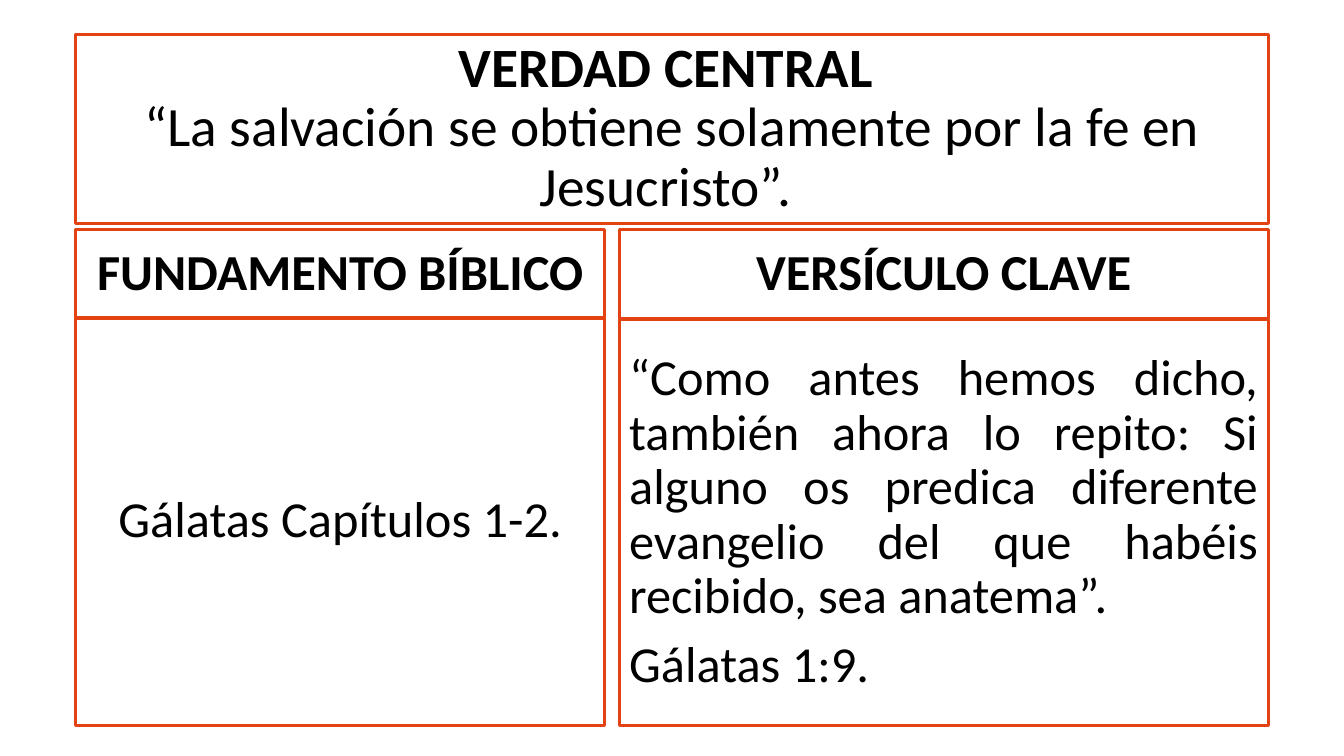
from lxml.etree import SubElement
from pptx import Presentation
from pptx.dml.color import RGBColor
from pptx.enum.text import MSO_ANCHOR, MSO_AUTO_SIZE, PP_ALIGN
from pptx.oxml.ns import qn
from pptx.util import Inches, Pt

ORANGE = RGBColor(0xE3, 0x43, 0x12)
BLACK = RGBColor(0, 0, 0)
FONT = "Calibri"

# Each paragraph is a list of (text, bold) lines.
TITLE = [[("VERDAD CENTRAL ", True),
          ("“La salvación se obtiene solamente por la fe en Jesucristo”. ", False)]]
BASIS_HEAD = [[("FUNDAMENTO BÍBLICO", True)]]
BASIS = [[("Gálatas Capítulos 1-2.", False)]]
VERSE_HEAD = [[("VERSÍCULO CLAVE", True)]]
VERSE = [
    [("“Como antes hemos dicho, también ahora lo repito: Si alguno os predica "
      "diferente evangelio del que habéis recibido, sea anatema”. ", False)],
    [("Gálatas 1:9.", False)],
]

# Grid in inches
LEFT, RIGHT, BOTTOM = 0.75, 12.58, 7.2
TITLE_TOP, TITLE_H = 0.34, 1.88
HEAD_TOP, HEAD_H = 2.28, 0.88
BASIS_TOP, VERSE_TOP = 3.15, 3.17
BASIS_W, VERSE_LEFT = 5.25, 6.14
VERSE_W = RIGHT - VERSE_LEFT


def fill_box(sp, paragraphs, box, size=36, align=PP_ALIGN.CENTER):
    """Place a placeholder, outline it and write its paragraphs."""
    sp.left, sp.top, sp.width, sp.height = (Inches(v) for v in box)
    sp.fill.background()
    sp.line.color.rgb = ORANGE
    sp.line.width = Pt(2.25)
    tf = sp.text_frame
    tf.word_wrap = True
    tf.auto_size = MSO_AUTO_SIZE.NONE
    tf.vertical_anchor = MSO_ANCHOR.MIDDLE
    for i, lines in enumerate(paragraphs):
        p = tf.add_paragraph() if i else tf.paragraphs[0]
        pPr = p._p.get_or_add_pPr()
        pPr.set("marL", "0")
        pPr.set("indent", "0")
        SubElement(pPr, qn("a:buNone"))
        p.alignment = align
        p.line_spacing = 0.9
        p.space_before = Pt(10 if i else 0)
        for j, (text, bold) in enumerate(lines):
            if j:
                p.add_line_break()
            r = p.add_run()
            r.text = text
            r.font.name = FONT
            r.font.size = Pt(size)
            r.font.bold = bold
            r.font.color.rgb = BLACK


prs = Presentation()
prs.slide_width, prs.slide_height = Inches(13.33), Inches(7.5)
s = prs.slides.add_slide(prs.slide_layouts.get_by_name("Comparison"))
title, basis_head, basis, verse_head, verse = s.placeholders

fill_box(title, TITLE, (LEFT, TITLE_TOP, RIGHT - LEFT, TITLE_H), size=39.6)
fill_box(basis_head, BASIS_HEAD, (LEFT, HEAD_TOP, BASIS_W, HEAD_H))
fill_box(basis, BASIS, (LEFT, BASIS_TOP, BASIS_W, BOTTOM - BASIS_TOP))
fill_box(verse_head, VERSE_HEAD, (VERSE_LEFT, HEAD_TOP, VERSE_W, HEAD_H))
fill_box(verse, VERSE, (VERSE_LEFT, VERSE_TOP, VERSE_W, BOTTOM - VERSE_TOP),
         align=PP_ALIGN.JUSTIFY)

prs.save("out.pptx")
